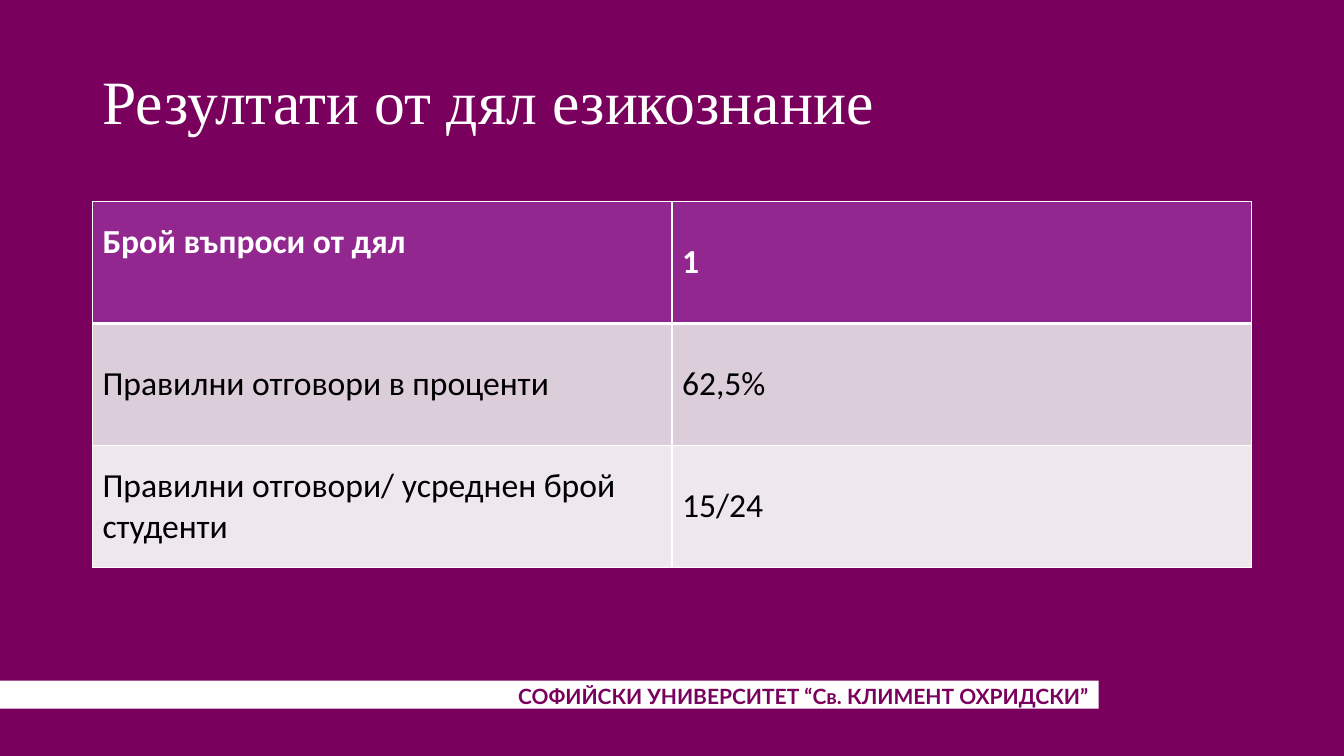
import pptx
import pptx.util
import pptx.dml.color
import pptx.enum.shapes
import pptx.enum.text
import pptx.oxml

Cm = pptx.util.Cm
Pt = pptx.util.Pt
RGBColor = pptx.dml.color.RGBColor
Align = pptx.enum.text.PP_ALIGN
Anchor = pptx.enum.text.MSO_ANCHOR

PLUM = RGBColor(0x7A, 0x00, 0x5E)
WHITE = RGBColor(0xFF, 0xFF, 0xFF)
BLACK = RGBColor(0x00, 0x00, 0x00)
VIOLET = RGBColor(0x92, 0x27, 0x8F)
MAUVE = RGBColor(0xDC, 0xCD, 0xDB)
PALE = RGBColor(0xEE, 0xE8, 0xEE)

TITLE = {"name": "Times New Roman", "size": Pt(44), "color": WHITE}
FOOTER = {"name": "Lato", "size": Pt(15), "bold": True, "color": PLUM}
HEAD = {"name": "Calibri", "size": Pt(24), "bold": True, "color": WHITE}
BODY = {**HEAD, "bold": False, "color": BLACK}

ROWS = [
    ("Брой въпроси от дял", "1"),
    ("Правилни отговори в проценти", "62,5%"),
    ("Правилни отговори/ усреднен брой студенти", "15/24"),
]
FILLS = [VIOLET, MAUVE, PALE]


def write(frame, text, look, align=Align.LEFT):
    frame.word_wrap = True
    para = frame.paragraphs[0]
    para.alignment = align
    run = para.add_run()
    run.text = text
    for key, value in look.items():
        if key == "color":
            run.font.color.rgb = value
        else:
            setattr(run.font, key, value)
    return para


def add_title(slide, text):
    title = slide.shapes.title
    place = {"left": Cm(2.33), "top": Cm(0.8), "width": Cm(29.21), "height": Cm(3.68)}
    for key, value in place.items():
        setattr(title, key, value)
    title.text_frame.vertical_anchor = Anchor.MIDDLE
    write(title.text_frame, text, TITLE).line_spacing = 0.9


def add_footer(slide, text):
    kind = pptx.enum.shapes.MSO_SHAPE.RECTANGLE
    band = slide.shapes.add_shape(kind, 0, Cm(17.15), Cm(27.69), Cm(0.71))
    band.shadow.inherit = False
    band.fill.solid()
    band.fill.fore_color.rgb = WHITE
    band.line.fill.background()
    box = slide.shapes.add_textbox(Cm(8.99), Cm(17.09), Cm(18.7), Cm(0.89))
    write(box.text_frame, text, FOOTER, Align.RIGHT)


def set_edges(cell, widths):
    """Draw white cell borders; widths maps L, R, T, B to points."""
    props = cell._tc.get_or_add_tcPr()
    for side, width in widths.items():
        props.append(pptx.oxml.parse_xml(
            f'<a:ln{side} xmlns:a="http://schemas.openxmlformats.org/drawingml/2006/main"'
            f' w="{Pt(width)}"><a:solidFill><a:srgbClr val="{WHITE}"/></a:solidFill>'
            f'</a:ln{side}>'))


def add_grid(slide):
    table = slide.shapes.add_table(
        len(ROWS), 2, Cm(2.33), Cm(5.08), Cm(29.21), Cm(9.21)).table
    for r, (texts, fill) in enumerate(zip(ROWS, FILLS)):
        table.rows[r].height = Cm(3.07)
        for c, text in enumerate(texts):
            cell = table.cell(r, c)
            set_edges(cell, {"L": 1, "R": 1, "T": 3 if r == 1 else 1, "B": 3 if r == 0 else 1})
            cell.fill.solid()
            cell.fill.fore_color.rgb = fill
            cell.vertical_anchor = Anchor.MIDDLE
            write(cell.text_frame, text, BODY if r else HEAD)
    # The first heading sits one line above the middle
    table.cell(0, 0).margin_bottom = Cm(1.14)


def main():
    deck = pptx.Presentation()
    deck.slide_width, deck.slide_height = Cm(33.87), Cm(19.05)
    slide = deck.slides.add_slide(deck.slide_layouts[5])
    slide.background.fill.solid()
    slide.background.fill.fore_color.rgb = PLUM
    add_footer(slide, "СОФИЙСКИ УНИВЕРСИТЕТ “Св. КЛИМЕНТ ОХРИДСКИ”")
    add_title(slide, "Резултати от дял езикознание")
    add_grid(slide)
    deck.save("out.pptx")


if __name__ == "__main__":
    main()
